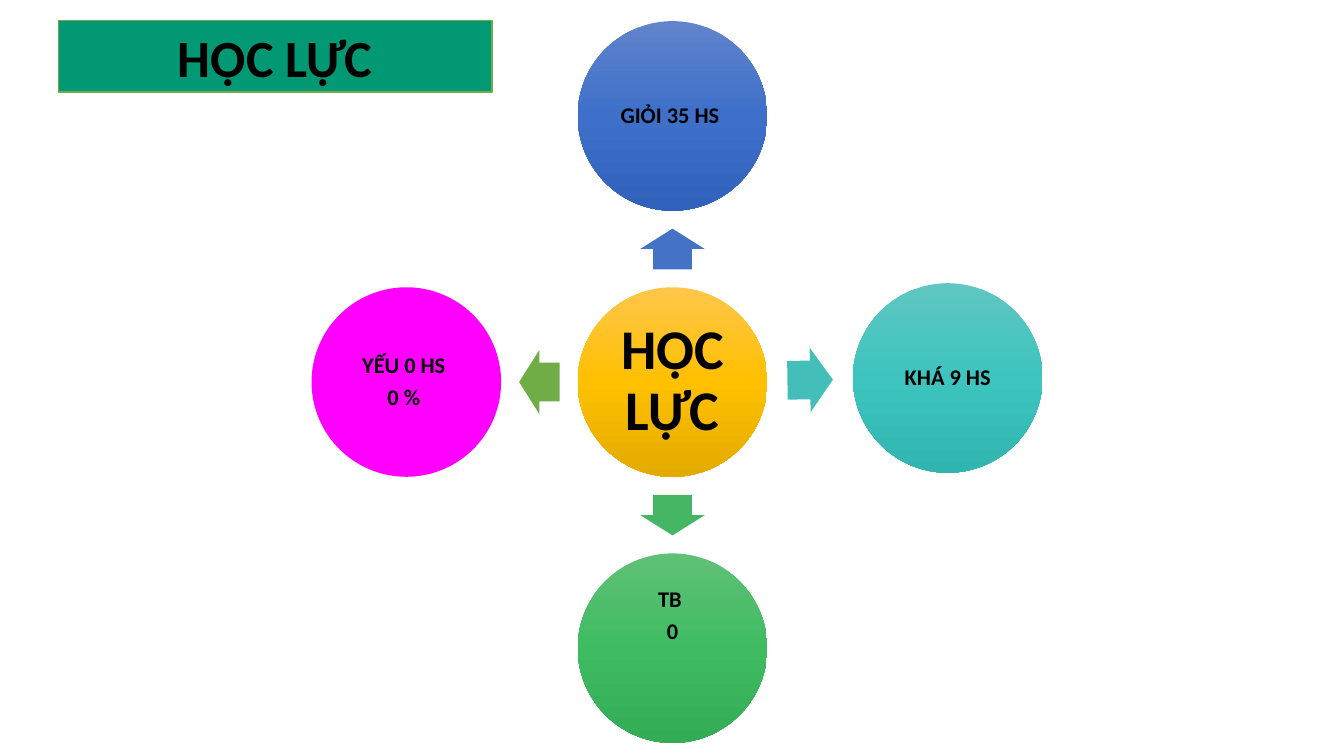
"""Build a slide showing student results as a hub with four radiating circles."""
import copy
import math

import pptx
import pptx.dml.color
import pptx.enum.shapes
import pptx.enum.text
import pptx.oxml.ns
import pptx.util

Inches = pptx.util.Inches
Pt = pptx.util.Pt
MSO = pptx.enum.shapes.MSO_SHAPE

TITLE = "HỌC LỰC"
HUB = {"lines": ["HỌC LỰC"], "fill": ["FFC64B", "FFC000", "E3AB00"]}
GRADES = [
    {"lines": ["GIỎI 35 HS "], "offset": (0, -2.64), "arrow": "4472C4",
     "fill": ["6183CB", "3E70CA", "3062BB"]},
    {"lines": ["KHÁ 9 HS"], "offset": (2.73, -0.04), "arrow": "43BEB9",
     "fill": ["60C6C1", "3DC4BF", "30B5B0"]},
    {"lines": ["TB ", "0"], "offset": (0, 2.64), "arrow": "45B664",
     "fill": ["60C077", "3FBC62", "33AC55"], "lift": 0.64},
    {"lines": ["YẾU 0 HS ", "0 % "], "offset": (-2.64, 0), "arrow": "70AD47",
     "fill": ["FF00FF"]},
]
THEME = {
    "font": "Calibri", "text": "000000", "banner": "029874", "border": "70AD47",
    "title_size": 37.3, "hub_size": 40, "grade_size": 16,
}
CENTER = (6.67, 3.79)
DIAMETER = 1.88
ARROW_SHARE = 0.53
ARROW_WIDTH = 0.64


def rgb(value):
    return pptx.dml.color.RGBColor.from_string(value)


def paint(sp, colors):
    if len(colors) == 1:
        sp.fill.solid()
        sp.fill.fore_color.rgb = rgb(colors[0])
        return
    sp.fill.gradient()
    sp.fill.gradient_angle = 270
    stops = sp.element.spPr.find(".//" + pptx.oxml.ns.qn("a:gsLst"))
    stops.insert(1, copy.deepcopy(stops[0]))
    for i, (stop, color) in enumerate(zip(sp.fill.gradient_stops, colors)):
        stop.position = i / (len(colors) - 1)
        stop.color.rgb = rgb(color)


def add_shape(slide, kind, center, size, colors):
    (x, y), (w, h) = center, size
    sp = slide.shapes.add_shape(
        kind, Inches(x - w / 2), Inches(y - h / 2), Inches(w), Inches(h))
    sp.shadow.inherit = False
    sp.line.fill.background()
    paint(sp, colors)
    return sp


def write(sp, lines, size, spacing=1.0, gap=0):
    tf = sp.text_frame
    tf.word_wrap = True
    tf.vertical_anchor = pptx.enum.text.MSO_ANCHOR.MIDDLE
    for i, line in enumerate(lines):
        p = tf.add_paragraph() if i else tf.paragraphs[0]
        p.alignment = pptx.enum.text.PP_ALIGN.CENTER
        p.line_spacing = spacing
        p.space_after = Pt(gap)
        r = p.add_run()
        r.text = line
        r.font.name = THEME["font"]
        r.font.size = Pt(size)
        r.font.bold = True
        r.font.color.rgb = rgb(THEME["text"])


def add_circle(slide, item, center, size, inset):
    sp = add_shape(slide, MSO.OVAL, center, (DIAMETER, DIAMETER), item["fill"])
    tf = sp.text_frame
    tf.margin_left = tf.margin_right = tf.margin_top = Inches(inset)
    tf.margin_bottom = Inches(inset + item.get("lift", 0))
    write(sp, item["lines"], size, 0.9, round(0.35 * size, 1))


def add_grade(slide, grade):
    dx, dy = grade["offset"]
    cx, cy = CENTER
    length = (math.hypot(dx, dy) - DIAMETER) * ARROW_SHARE
    arrow = add_shape(slide, MSO.RIGHT_ARROW, (cx + dx / 2, cy + dy / 2),
                      (length, ARROW_WIDTH), [grade["arrow"]])
    arrow.adjustments[0] = 0.6
    arrow.adjustments[1] = 0.5
    arrow.rotation = math.degrees(math.atan2(dy, dx)) % 360
    add_circle(slide, grade, (cx + dx, cy + dy), THEME["grade_size"], 0.02)


def main():
    prs = pptx.Presentation()
    prs.slide_width, prs.slide_height = Inches(13.33), Inches(7.5)
    s = prs.slides.add_slide(prs.slide_layouts[6])
    add_circle(s, HUB, CENTER, THEME["hub_size"], 0.06)
    for grade in GRADES:
        add_grade(s, grade)
    banner = add_shape(s, MSO.RECTANGLE, (2.73, 0.56), (4.3, 0.71), [THEME["banner"]])
    banner.line.color.rgb = rgb(THEME["border"])
    banner.line.width = Pt(1)
    write(banner, [TITLE], THEME["title_size"])
    prs.save("out.pptx")


if __name__ == "__main__":
    main()
